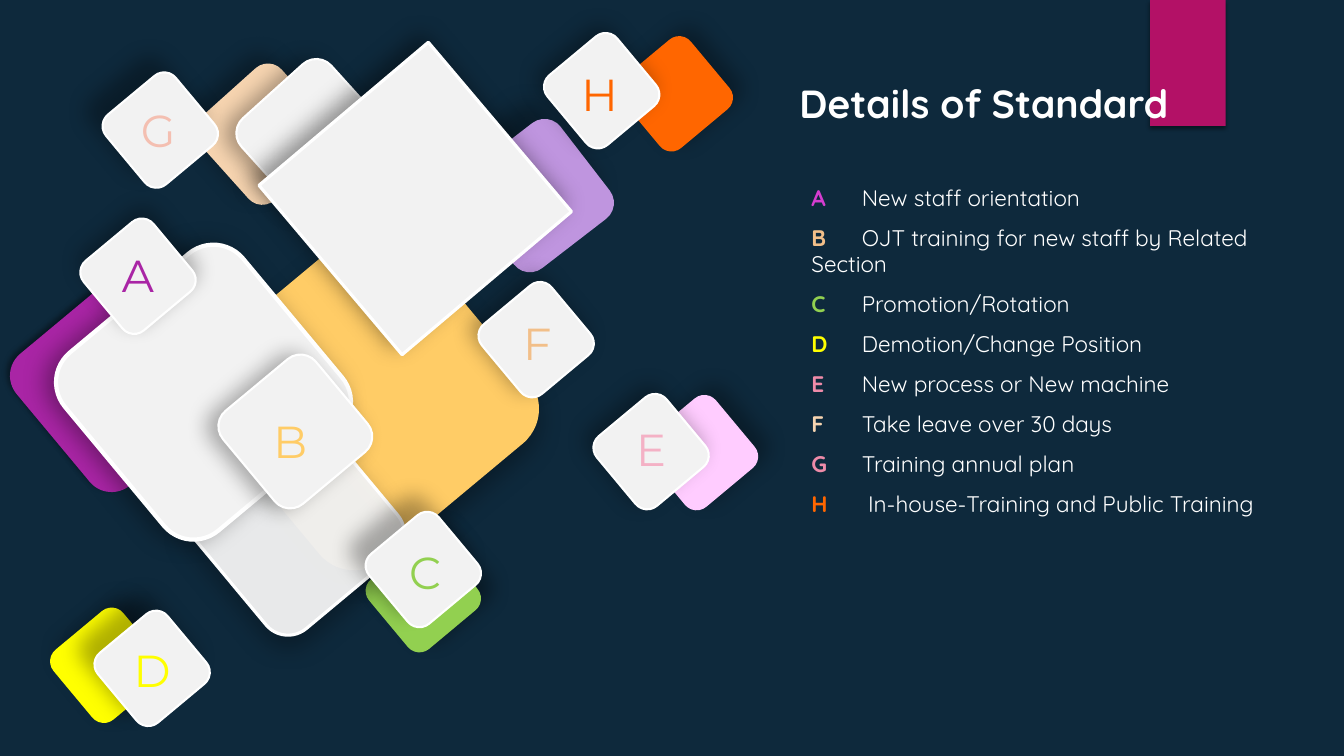
from lxml.etree import SubElement
from pptx import Presentation
from pptx.dml.color import RGBColor
from pptx.enum.shapes import MSO_SHAPE
from pptx.enum.text import MSO_ANCHOR, MSO_AUTO_SIZE, PP_ALIGN
from pptx.oxml.ns import qn
from pptx.util import Pt

NAVY, PINK, WHITE, CARD = "0E293C", "B31166", "FFFFFF", "F2F2F2"
TILT = 320.2
LETTER_BOX = 43.2

# left, top, side, rotation, fill, shadow (opacity %, blur, distance, direction)
COLOUR_PLATES = [
    (164.2, 186.5, 194.4, TILT, "FFCC66", (31, 17, 8, 90)),
    (23.8, 212.4, 122.4, TILT, "A925A5", (40, 4, 3, 225)),
    (149.8, 56.2, 79.2, 318.1, "F6D4B0", (31, 15, 9, 225)),
    (340.6, 96.5, 86.4, 322.4, "BF95DF", (31, 16, 16, 225)),
    (468, 290.9, 64.8, TILT, "FFCCFF", (31, 15, 9, 315)),
    (270, 392.4, 64.8, TILT, "92D050", (40, 15, 11, 315)),
    (450, 34.6, 64.8, TILT, "FF6600", (31, 15, 9, 315)),
    (44.6, 442.8, 64.8, TILT, "FFFF00", (31, 15, 9, 315)),
]

# left, top, side, rotation, outline width, opacity %, shadow, preset
BLANK_CARDS = [
    (149.8, 314.6, 122.4, TILT, 2.25, 96, (29, 17, 8, 90), MSO_SHAPE.ROUNDED_RECTANGLE),
    (62.6, 197.3, 165.6, TILT, 3, 100, (34, 17, 7, 180), MSO_SHAPE.ROUNDED_RECTANGLE),
    (180.7, 54, 86.4, 317.9, 1.5, 100, (31, 15, 8, 180), MSO_SHAPE.ROUNDED_RECTANGLE),
    (217.4, 62.6, 158.4, 319.8, 2.25, 100, (40, 16, 8, 225), MSO_SHAPE.RECTANGLE),
]

# letter, colour, tile left, top, side, letter left, top, shadow distance, direction
LETTER_TILES = [
    ("A", "A925A5", 66.2, 164.9, 64.8, 77, 174.2, 7, 270),
    ("B", "FFCC66", 167.8, 265, 86.4, 185.8, 293, 8, 180),
    ("E", "F4B1C5", 432.7, 290.2, 64.8, 443.5, 298.8, 7, 225),
    ("C", "92D050", 270, 374.4, 64.8, 282.2, 386.6, 15, 225),
    ("F", "F2BF89", 350.6, 210.2, 64.8, 362.2, 223.2, 7, 225),
    ("G", "F4BFB1", 82.1, 60.5, 64.8, 91.4, 71.3, 15, 225),
    ("H", "FF6600", 397.4, 32.4, 64.8, 406.8, 45.4, 7, 225),
    ("D", "FFFF00", 76.3, 445, 64.8, 87.1, 456.5, 15, 225),
]

STANDARDS = [
    ("A\t", "D53DD0", "New staff orientation"),
    ("B\t", "F2BF89", "OJT training for new staff by Related Section"),
    ("C\t", "92D050", "Promotion/Rotation"),
    ("D \t", "FFFF00", "Demotion/Change Position"),
    ("E\t", "EE8BA9", "New process or New machine"),
    ("F\t", "F6D4B0", "Take leave over 30 days"),
    ("G\t", "EE8BA9", "Training annual plan"),
    ("H\t ", "FF6600", "In-house-Training and Public Training"),
]


def colour(hex_code):
    return RGBColor.from_string(hex_code)


def place(shape, left, top, width, height):
    shape.left, shape.top = Pt(left), Pt(top)
    shape.width, shape.height = Pt(width), Pt(height)


def add_shadow(shape, opacity, blur, distance, direction):
    shape.shadow.inherit = False
    effects = shape.element.spPr.find(qn("a:effectLst"))
    outer = SubElement(effects, qn("a:outerShdw"), blurRad=str(Pt(blur)), dist=str(Pt(distance)),
                       dir=str(direction * 60000), algn="ctr", rotWithShape="0")
    black = SubElement(outer, qn("a:srgbClr"), val="000000")
    SubElement(black, qn("a:alpha"), val=str(opacity * 1000))


def add_plate(shapes, left, top, width, height, fill, shadow, rotation=0,
              outline=0, opacity=100, preset=MSO_SHAPE.ROUNDED_RECTANGLE):
    plate = shapes.add_shape(preset, Pt(left), Pt(top), Pt(width), Pt(height))
    plate.rotation = rotation
    plate.fill.solid()
    plate.fill.fore_color.rgb = colour(fill)
    if opacity < 100:
        solid = plate.element.spPr.find(qn("a:solidFill"))
        SubElement(solid[0], qn("a:alpha"), val=str(opacity * 1000))
    if outline:
        plate.line.color.rgb = colour(WHITE)
        plate.line.width = Pt(outline)
    else:
        plate.line.fill.background()
    add_shadow(plate, *shadow)


def add_letter_tile(slide, letter, tint, left, top, side, letter_left, letter_top,
                    distance, direction):
    tile = slide.shapes.add_group_shape()
    add_plate(tile.shapes, left, top, side, side, CARD, (31, 15, distance, direction),
              TILT, outline=1.5)
    label = tile.shapes.add_textbox(Pt(letter_left), Pt(letter_top), Pt(LETTER_BOX), Pt(LETTER_BOX))
    frame = label.text_frame
    frame.word_wrap = True
    frame.vertical_anchor = MSO_ANCHOR.MIDDLE
    paragraph = frame.paragraphs[0]
    paragraph.text = letter
    paragraph.alignment = PP_ALIGN.CENTER
    paragraph.font.name = "Montserrat"
    paragraph.font.size = Pt(32)
    paragraph.font.color.rgb = colour(tint)


def bring_to_front(slide, shape):
    slide.shapes.element.append(shape.element)


def fill_title(slide):
    title = slide.shapes.title
    place(title, 563.8, 53.3, 279.4, 41)
    frame = title.text_frame
    frame.word_wrap = False
    frame.auto_size = MSO_AUTO_SIZE.NONE
    heading = frame.paragraphs[0]
    heading.text = "Details of Standard"
    heading.alignment = PP_ALIGN.LEFT
    heading.font.name = "Quicksand"
    heading.font.size = Pt(28)
    heading.font.bold = True
    heading.font.color.rgb = colour(WHITE)
    bring_to_front(slide, title)


def fill_standards(slide):
    body = slide.placeholders[1]
    place(body, 572.4, 128.9, 368.6, 248.4)
    frame = body.text_frame
    frame.word_wrap = True
    frame.auto_size = MSO_AUTO_SIZE.NONE
    for index, (letter, tint, wording) in enumerate(STANDARDS):
        item = frame.add_paragraph() if index else frame.paragraphs[0]
        properties = item._p.get_or_add_pPr()
        properties.set("marL", "0")
        properties.set("indent", "0")
        SubElement(properties, qn("a:buNone"))
        tabs = SubElement(properties, qn("a:tabLst"))
        SubElement(tabs, qn("a:tab"), pos=str(Pt(36)), algn="l")
        item.space_before = Pt(10 if index else 0)
        item.line_spacing = 0.96
        item.font.name = "Quicksand"
        item.font.size = Pt(16.1)
        for text, run_colour, bold in ((letter, tint, True), (wording, WHITE, False)):
            run = item.add_run()
            run.text = text
            run.font.bold = bold
            run.font.color.rgb = colour(run_colour)
    bring_to_front(slide, body)


def main():
    deck = Presentation()
    deck.slide_width, deck.slide_height = Pt(960), Pt(540)
    slide = deck.slides.add_slide(deck.slide_layouts[1])
    slide.background.fill.solid()
    slide.background.fill.fore_color.rgb = colour(NAVY)

    add_plate(slide.shapes, 821.5, 0, 54, 90, PINK, (45, 3, 2, 90), preset=MSO_SHAPE.RECTANGLE)
    for left, top, side, rotation, fill, shadow in COLOUR_PLATES:
        add_plate(slide.shapes, left, top, side, side, fill, shadow, rotation)
    for left, top, side, rotation, outline, opacity, shadow, preset in BLANK_CARDS:
        add_plate(slide.shapes, left, top, side, side, CARD, shadow, rotation,
                  outline, opacity, preset)
    for tile in LETTER_TILES:
        add_letter_tile(slide, *tile)
    fill_title(slide)
    fill_standards(slide)
    deck.save("out.pptx")


if __name__ == "__main__":
    main()
